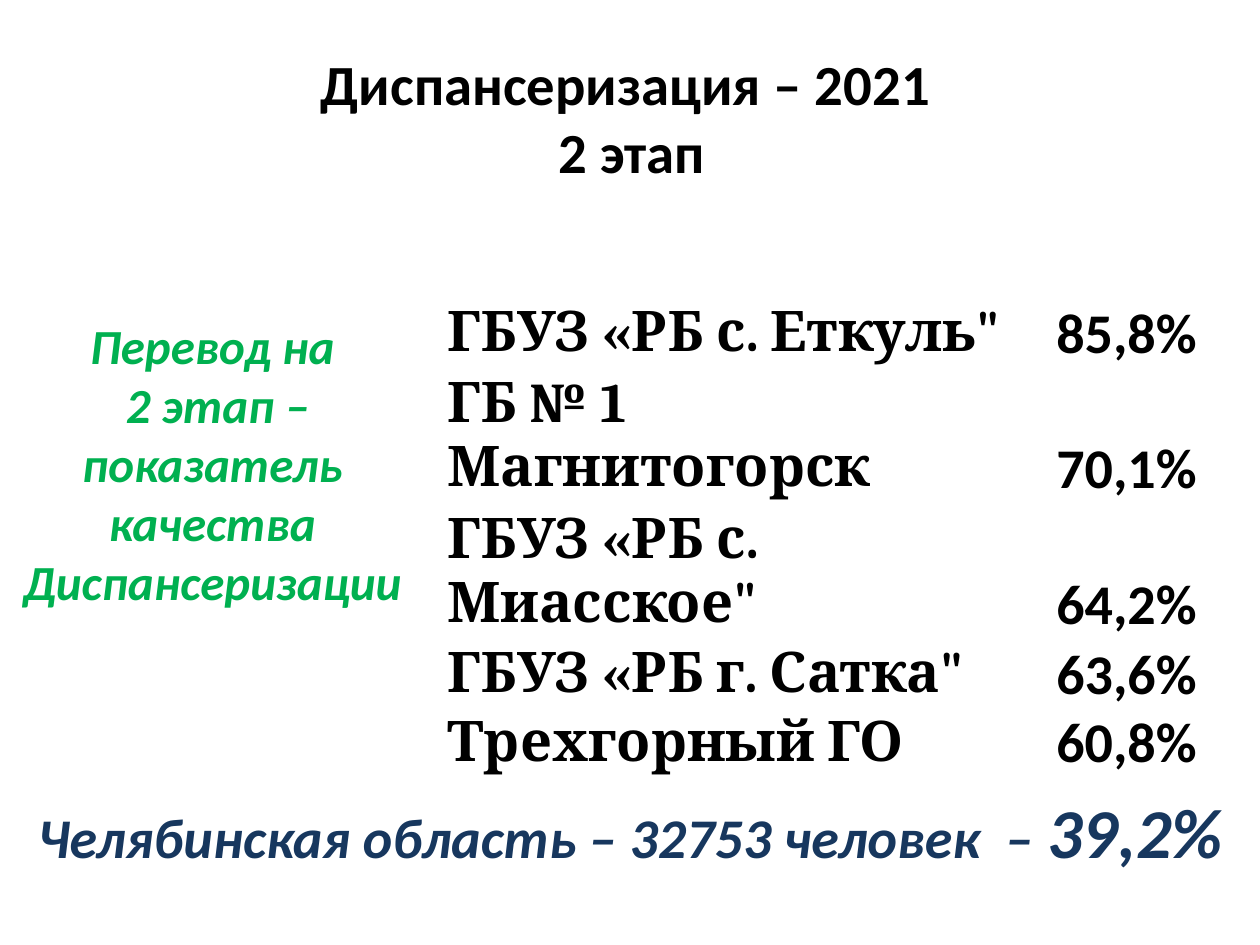
"""Build the slide on the second stage of the 2021 health check-ups."""
import dataclasses

import lxml.etree
import pptx
import pptx.dml.color
import pptx.enum.text
import pptx.oxml.ns
import pptx.util

Cm = pptx.util.Cm
Align = pptx.enum.text.PP_ALIGN
Anchor = pptx.enum.text.MSO_ANCHOR


@dataclasses.dataclass(frozen=True)
class Theme:
    """Fonts, colours and type sizes of the slide."""
    sans: str = "Calibri"
    serif: str = "Cambria"
    black: str = "000000"
    green: str = "00B050"
    navy: str = "17375E"
    white: str = "FFFFFF"
    title: float = 32.4
    note: float = 28
    text: float = 32
    accent: float = 40


THEME = Theme()
HOSPITALS = [
    ("ГБУЗ «РБ с. Еткуль\"", "85,8%"),
    ("ГБ № 1 Магнитогорск", "70,1%"),
    ("ГБУЗ «РБ с. Миасское\"", "64,2%"),
    ("ГБУЗ «РБ г. Сатка\"", "63,6%"),
    ("Трехгорный ГО", "60,8%"),
]


def add_span(para, text, size, color, font=THEME.sans, italic=False):
    """Append one bold run to a paragraph."""
    span = para.add_run()
    span.text = text
    span.font.name = font
    span.font.size = pptx.util.Pt(size)
    span.font.bold = True
    span.font.italic = italic
    span.font.color.rgb = pptx.dml.color.RGBColor.from_string(color)


def fill_title(page, lines):
    """Place the title and write its lines with breaks between them."""
    title = page.shapes.title
    title.left, title.top, title.width, title.height = Cm(0.08), Cm(0.76), Cm(25.32), Cm(3.18)
    frame = title.text_frame
    frame.auto_size = pptx.enum.text.MSO_AUTO_SIZE.NONE
    frame.vertical_anchor = Anchor.MIDDLE
    para = frame.paragraphs[0]
    para.alignment = Align.CENTER
    for index, line in enumerate(lines):
        if index:
            para.add_line_break()
        add_span(para, line, THEME.title, THEME.black)


def add_text(page, place, paragraphs, color, anchor, align, spacing=None):
    """Add an italic text box from paragraphs of (text, size) spans."""
    box = page.shapes.add_textbox(*map(Cm, place))
    frame = box.text_frame
    frame.word_wrap = True
    frame.vertical_anchor = anchor
    for index, spans in enumerate(paragraphs):
        para = frame.add_paragraph() if index else frame.paragraphs[0]
        para.alignment = align
        para.line_spacing = spacing
        for text, size in spans:
            add_span(para, text, size, color, italic=True)


def draw_borders(cell):
    """Give a cell thin white borders on all four sides."""
    properties = cell._tc.get_or_add_tcPr()
    qn = pptx.oxml.ns.qn
    for index, side in enumerate(("a:lnL", "a:lnR", "a:lnT", "a:lnB")):
        line = lxml.etree.Element(qn(side), w=str(pptx.util.Pt(1)))
        fill = lxml.etree.SubElement(line, qn("a:solidFill"))
        lxml.etree.SubElement(fill, qn("a:srgbClr"), val=THEME.white)
        properties.insert(index, line)


def fill_cell(cell, text, font, anchor, align):
    """Write and format one table cell."""
    cell.fill.background()
    draw_borders(cell)
    cell.margin_left = cell.margin_right = cell.margin_top = Cm(0.03)
    cell.margin_bottom = 0
    cell.vertical_anchor = anchor
    para = cell.text_frame.paragraphs[0]
    para.alignment = align
    add_span(para, text, THEME.text, THEME.black, font)


def add_ranking(page, rows):
    """Add the table of hospitals and their shares."""
    place = map(Cm, (8.99, 6.02, 15.32, 2.65))
    table = page.shapes.add_table(len(rows), 2, *place).table
    table.first_row = table.horz_banding = False
    table.columns[0].width, table.columns[1].width = Cm(12.12), Cm(3.2)
    for index, (hospital, share) in enumerate(rows):
        fill_cell(table.cell(index, 0), hospital, THEME.serif, Anchor.MIDDLE, Align.LEFT)
        fill_cell(table.cell(index, 1), share, THEME.sans, Anchor.BOTTOM, Align.CENTER)


def main():
    """Build and save the deck."""
    deck = pptx.Presentation()
    deck.slide_width, deck.slide_height = Cm(25.4), Cm(19.05)
    page = deck.slides.add_slide(deck.slide_layouts[5])
    fill_title(page, ["Диспансеризация – 2021 ", "2 этап"])
    note = [
        [("Перевод на", THEME.note)],
        [(" 2 этап – показатель качества Диспансеризации", THEME.note)],
    ]
    add_text(page, (0.18, 5.13, 8.2, 8.41), note, THEME.green, Anchor.MIDDLE, Align.CENTER)
    total = [[("Челябинская область – 32753 человек  – ", THEME.text), ("39,2%", THEME.accent)]]
    add_text(page, (0.51, 15.52, 24.69, 2.39), total, THEME.navy, Anchor.TOP, Align.LEFT, 1.15)
    add_ranking(page, HOSPITALS)
    deck.save("out.pptx")


if __name__ == "__main__":
    main()
